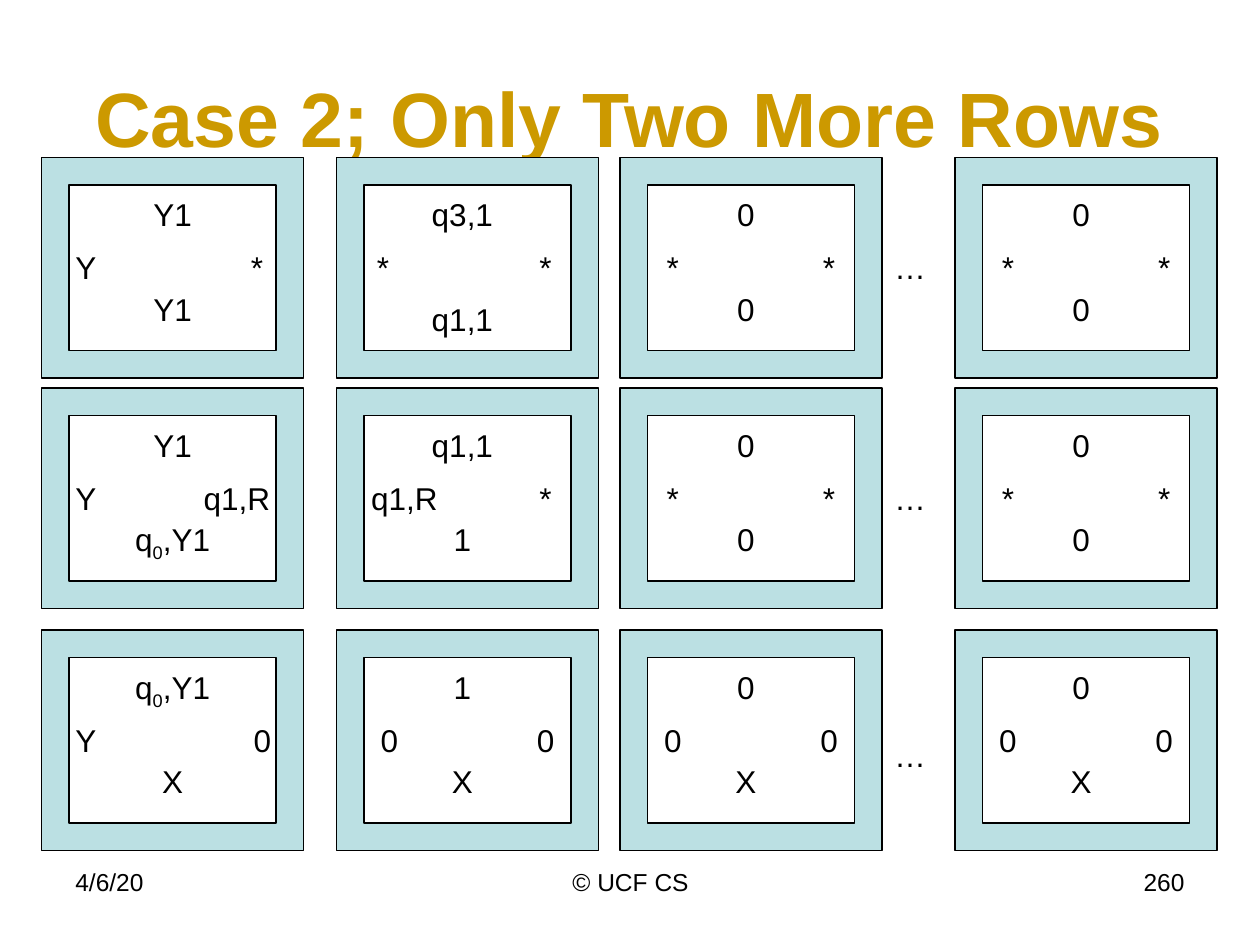
from pptx import Presentation
from pptx.dml.color import RGBColor
from pptx.enum.shapes import MSO_SHAPE
from pptx.enum.text import MSO_ANCHOR, MSO_AUTO_SIZE, PP_ALIGN
from pptx.util import Inches, Pt

FRAME = MSO_SHAPE.FRAME
MIDDLE = MSO_ANCHOR.MIDDLE
GROW, FIXED = MSO_AUTO_SIZE.SHAPE_TO_FIT_TEXT, MSO_AUTO_SIZE.NONE
LEFT, CENTER, RIGHT = PP_ALIGN.LEFT, PP_ALIGN.CENTER, PP_ALIGN.RIGHT
BLACK = RGBColor(0x00, 0x00, 0x00)
GOLD = RGBColor(0xCC, 0x99, 0x00)
TEAL = RGBColor(0xBB, 0xE0, 0xE3)

COLUMNS = (0.33, 2.67, 4.92, 7.58)
ROWS = (1.25, 3.08, 5)
TOP, SIDE, BOTTOM = 0.25, 0.67, 1
NARROW, WIDE = 0.5, 0.92
TILES = (
    (("Y1", "Y", "*", "Y1"), ("q3,1", "*", "*", "q1,1"), ("0", "*", "*", "0"), ("0", "*", "*", "0")),
    (("Y1", "Y", "q1,R", "q_0,Y1"), ("q1,1", "q1,R", "*", "1"), ("0", "*", "*", "0"), ("0", "*", "*", "0")),
    (("q_0,Y1", "Y", "0", "X"), ("1", "0", "0", "X"), ("0", "0", "0", "X"), ("0", "0", "0", "X")),
)
EDGE_SLOTS = {
    (0, 0): {"right": (1.25, WIDE, CENTER)},
    (1, 0): {"right": (1.09, WIDE, CENTER)},
    (2, 0): {"right": (1.09, 0.83, RIGHT)},
    (0, 1): {"left": (0.08, 0.58, CENTER), "bottom": 1.08},
    (1, 1): {"left": (0.08, WIDE, CENTER)},
}
ELLIPSES = ((1.92, WIDE), (3.75, WIDE), (5.79, NARROW))
FOOTERS = ((0.5, 2.33, "4/6/20", LEFT), (3.42, 3.17, "© UCF CS", CENTER), (7.17, 2.33, "260", RIGHT))


class TileSlide:
    """Holds the text style and the page, and draws each kind of element."""

    font_name = "Arial"

    def __init__(self, deck):
        self.page = deck.slides.add_slide(deck.slide_layouts[5])

    def style(self, para, size, color, align, bold=False):
        para.alignment = align
        for span in para.runs:
            span.font.name = self.font_name
            span.font.size = Pt(size)
            span.font.color.rgb = color
            span.font.bold = bold

    def title(self, text):
        box = self.page.shapes.title
        box.left, box.top, box.width, box.height = (Inches(n) for n in (0.5, 0.3, 9, 1.25))
        frame = box.text_frame
        frame.text = text
        frame.vertical_anchor = MIDDLE
        frame.auto_size = FIXED
        self.style(frame.paragraphs[0], 44, GOLD, CENTER, True)

    def label(self, left, top, width, text, align=CENTER, size=18, height=0.5, fit=GROW):
        box = self.page.shapes.add_textbox(Inches(left), Inches(top), Inches(width), Inches(height))
        frame = box.text_frame
        frame.word_wrap = True
        frame.auto_size = fit
        para = frame.paragraphs[0]
        base, mark, rest = text.partition("_")
        para.text = base
        if mark:
            subscript = para.add_run()
            subscript.text = rest[0]
            subscript.font._element.set("baseline", "-25000")
            para.add_run().text = rest[1:]
        self.style(para, size, BLACK, align)

    def border(self, left, top):
        shape = self.page.shapes.add_shape(FRAME, Inches(left), Inches(top), Inches(2.08), Inches(1.75))
        shape.shadow.inherit = False
        shape.fill.solid()
        shape.fill.fore_color.rgb = TEAL
        shape.line.color.rgb = BLACK
        shape.line.width = Pt(0.75)

    def tile(self, row, column):
        left, top = COLUMNS[column], ROWS[row]
        upper, west, east, lower = TILES[row][column]
        slots = EDGE_SLOTS.get((row, column), {})
        west_slot = (0.17, WIDE, LEFT) if column == 0 else (0.17, NARROW, CENTER)
        self.border(left, top)
        for text, offset in ((upper, TOP), (lower, slots.get("bottom", BOTTOM))):
            width = 1.58 if column == 0 else 1.17 if len(text) > 1 else NARROW
            center = 1.04 if column == 0 else 1
            self.label(left + center - width / 2, top + offset, width, text)
        for text, slot in (
            (west, slots.get("left", west_slot)),
            (east, slots.get("right", (1.41, NARROW, CENTER))),
        ):
            offset, width, align = slot
            self.label(left + offset, top + SIDE, width, text, align)


def main():
    deck = Presentation()
    deck.slide_width, deck.slide_height = Inches(10), Inches(7.5)
    slide = TileSlide(deck)
    slide.title("Case 2; Only Two More Rows")
    for left, width, text, align in FOOTERS:
        slide.label(left, 6.83, width, text, align, 14, 0.52, FIXED)
    for row, (ellipsis_top, ellipsis_width) in enumerate(ELLIPSES):
        for column in range(len(COLUMNS)):
            slide.tile(row, column)
        slide.label(7, ellipsis_top, ellipsis_width, "…", LEFT)
    deck.save("out.pptx")


if __name__ == "__main__":
    main()
